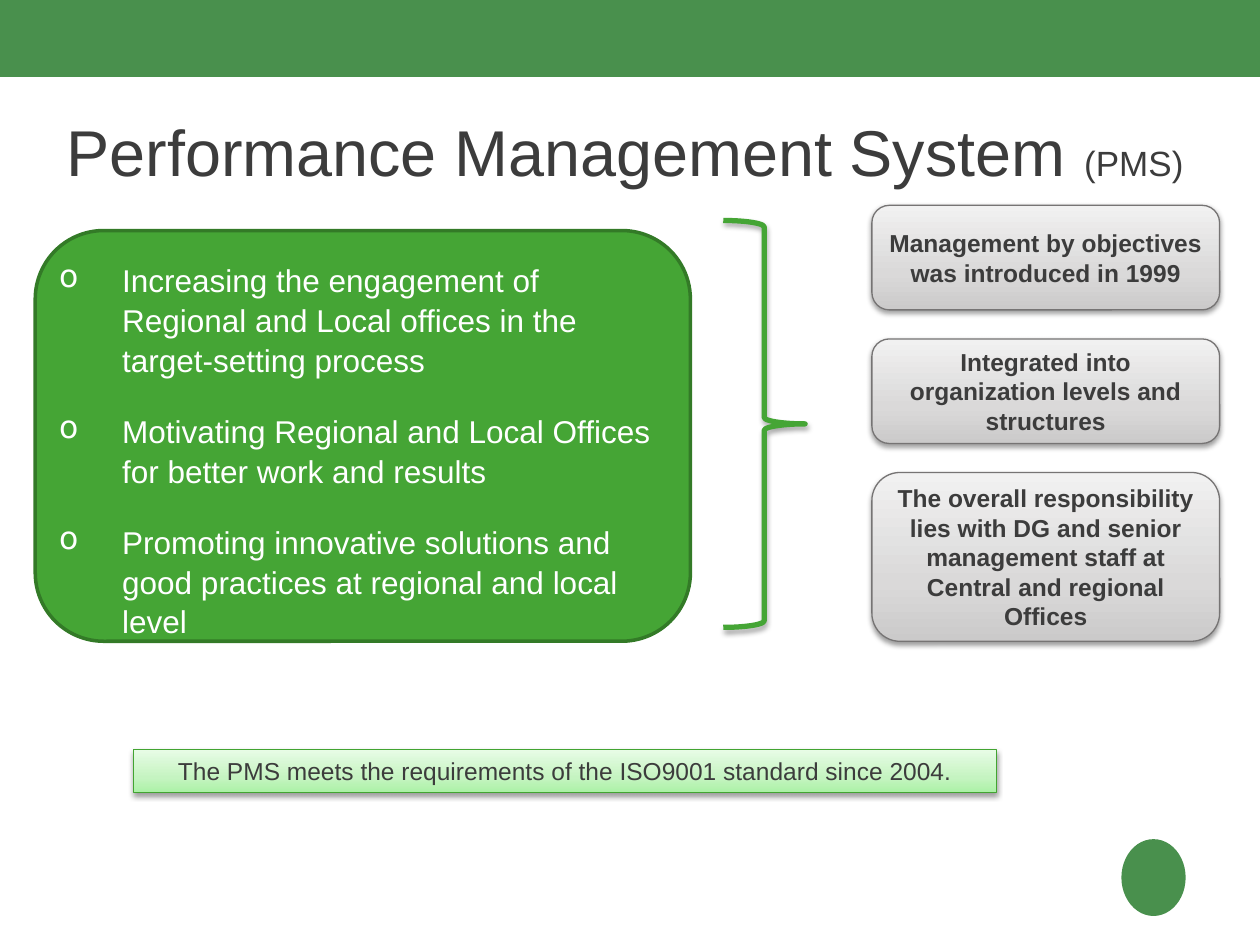
import copy
import pptx
import pptx.util
import pptx.dml.color
import pptx.enum.shapes
import pptx.enum.text
import pptx.oxml
import pptx.oxml.ns

Inches, Pt = pptx.util.Inches, pptx.util.Pt
KIND = pptx.enum.shapes.MSO_SHAPE
ALIGN = pptx.enum.text.PP_ALIGN
ANCHOR = pptx.enum.text.MSO_ANCHOR
qn = pptx.oxml.ns.qn

TITLE = [("Performance Management System ", 37), ("(PMS)", 20)]
GOALS = [
    "Increasing the engagement of Regional and Local offices in the target-setting process",
    "Motivating Regional and Local Offices for better work and results",
    "Promoting innovative solutions and good practices at regional and local level",
]
CARDS = [
    ("Management by objectives was introduced in 1999", 0.83),
    ("Integrated into organization levels and structures", 0.83),
    ("The overall responsibility lies with DG and senior management staff at "
     "Central and regional Offices", 1.34),
]
NOTE = "The PMS meets the requirements of the ISO9001 standard since 2004."

INK, WHITE, BRAND = "3C3C3C", "FFFFFF", "49904D"
GREEN, EDGE = "45A535", "337A27"
GREY = [(0, "CBCACA"), (0.35, "DAD9D9"), (1, "F1F1F1")]
MINT = [(0, "ABF1A6"), (0.35, "C5F4C1"), (1, "E8FCE6")]


def paint(color, code):
    color.rgb = pptx.dml.color.RGBColor.from_string(code)


def style(run, size, code=INK, bold=False):
    run.font.name = "Arial"
    run.font.size = Pt(size)
    run.font.bold = bold
    paint(run.font.color, code)


def blend(fill, stops):
    fill.gradient()
    fill.gradient_angle = 90
    first = fill.gradient_stops[0]._gs
    first.addnext(copy.deepcopy(first))
    for stop, (place, code) in zip(fill.gradient_stops, stops):
        stop.position = place
        paint(stop.color, code)


def shade(shape, alpha, dist):
    xml = (f'<a:outerShdw {pptx.oxml.ns.nsdecls("a")} blurRad="{Pt(3.1)}" '
           f'dist="{Pt(dist)}" dir="5400000" rotWithShape="0">'
           f'<a:srgbClr val="000000"><a:alpha val="{alpha * 1000}"/></a:srgbClr>'
           '</a:outerShdw>')
    effect = shape._element.spPr.find(qn("a:effectLst"))
    effect.append(pptx.oxml.parse_xml(xml))


def draw(slide, kind, box, fill=None, line=None, width=0.75):
    shape = slide.shapes.add_shape(kind, *map(Inches, box))
    shape.shadow.inherit = False
    if isinstance(fill, list):
        blend(shape.fill, fill)
    elif fill:
        shape.fill.solid()
        paint(shape.fill.fore_color, fill)
    else:
        shape.fill.background()
    if line:
        paint(shape.line.color, line)
        shape.line.width = Pt(width)
    else:
        shape.line.fill.background()
    return shape


def label(slide, kind, box, text, fill, line, bold=False):
    shape = draw(slide, kind, box, fill, line)
    shade(shape, 38, 1.6)
    frame = shape.text_frame
    frame.word_wrap = True
    frame.vertical_anchor = ANCHOR.MIDDLE
    frame.text = text
    para = frame.paragraphs[0]
    para.alignment = ALIGN.CENTER
    style(para.runs[0], 14, bold=bold)


def clear(frame):
    frame.margin_left = frame.margin_right = 0
    frame.margin_top = frame.margin_bottom = 0
    frame.word_wrap = True


def head(slide):
    shape = slide.shapes.title
    shape.left, shape.top = Inches(0.53), Inches(0.84)
    shape.width, shape.height = Inches(9.26), Inches(0.71)
    frame = shape.text_frame
    clear(frame)
    frame.auto_size = pptx.enum.text.MSO_AUTO_SIZE.NONE
    frame.vertical_anchor = ANCHOR.MIDDLE
    para = frame.paragraphs[0]
    para.alignment = ALIGN.LEFT
    for text, size in TITLE:
        run = para.add_run()
        run.text = text
        style(run, size)


def goals(slide):
    box = slide.shapes.add_textbox(*map(Inches, (0.47, 2.06, 4.8, 3.15)))
    frame = box.text_frame
    clear(frame)
    frame.text = "\n".join(GOALS)
    for rank, para in enumerate(frame.paragraphs):
        para.line_spacing = 1.05
        para.space_before = Pt(18 if rank else 0)
        style(para.runs[0], 18, WHITE)
        props = para._p.get_or_add_pPr()
        props.set("marL", str(Inches(0.5)))
        props.set("indent", str(Inches(-0.5)))
        mark = props.makeelement(qn("a:buChar"), {"char": "o"})
        props.append(mark)


def main():
    deck = pptx.Presentation()
    deck.slide_width, deck.slide_height = Inches(10), Inches(7.5)
    slide = deck.slides.add_slide(deck.slide_layouts[5])

    draw(slide, KIND.RECTANGLE, (0, -0.01, 10, 0.62), BRAND)
    draw(slide, KIND.OVAL, (8.9, 6.66, 0.51, 0.61), BRAND)
    draw(slide, KIND.ROUNDED_RECTANGLE, (0.28, 1.83, 5.2, 3.26), GREEN, EDGE, 2)
    head(slide)
    goals(slide)

    brace = draw(slide, KIND.RIGHT_BRACE, (5.74, 1.75, 0.65, 3.23), None, GREEN, 3)
    brace.adjustments[0] = 0.08
    brace.adjustments[1] = 0.5
    shade(brace, 35, 1.8)

    top, gap = 1.63, 0.23
    for text, tall in CARDS:
        label(slide, KIND.ROUNDED_RECTANGLE, (6.92, top, 2.76, tall), text,
              GREY, "767474", True)
        top += tall + gap
    label(slide, KIND.RECTANGLE, (1.06, 5.95, 6.85, 0.34), NOTE, MINT, "42A431")
    deck.save("out.pptx")


if __name__ == "__main__":
    main()
